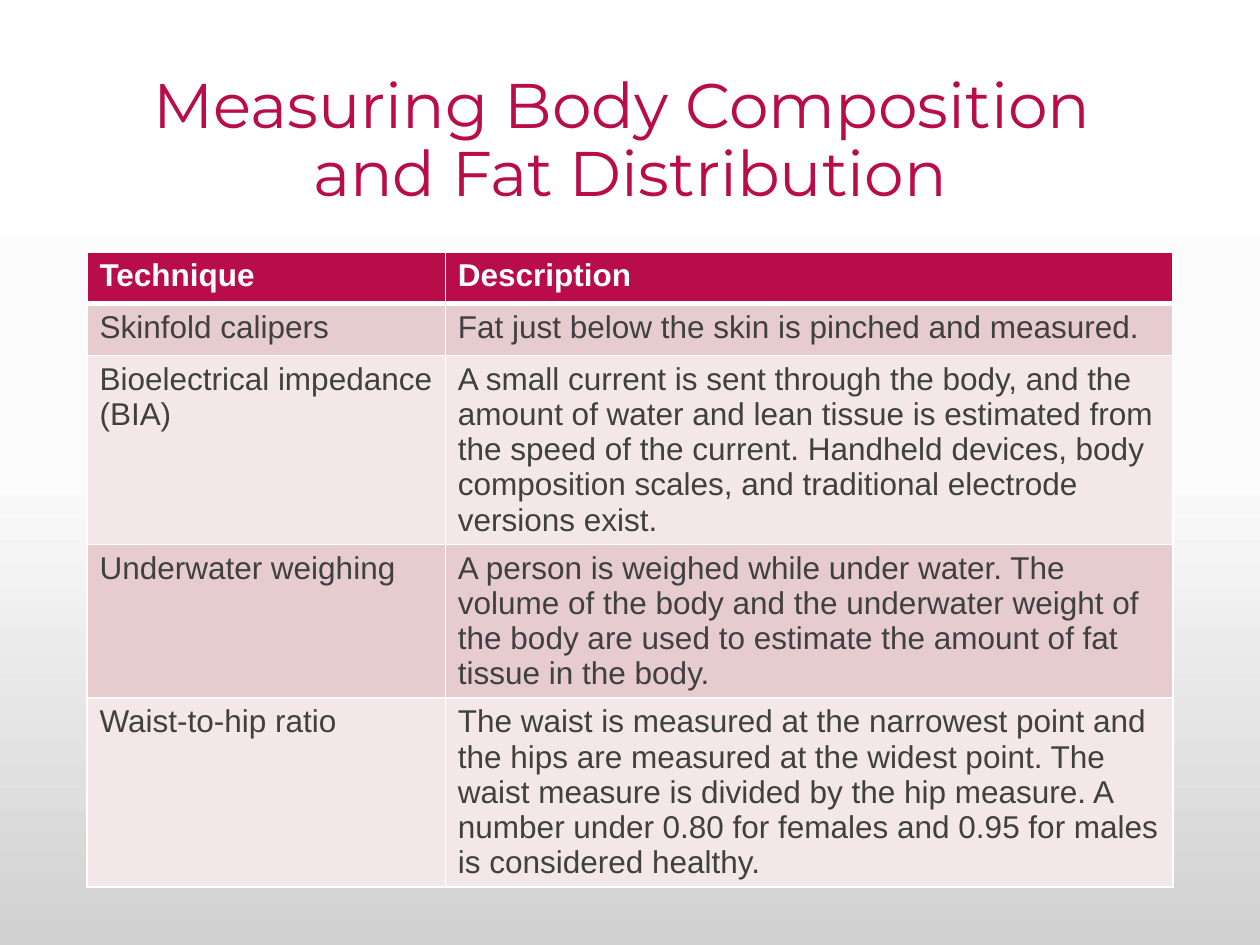
from dataclasses import dataclass

import pptx
import pptx.dml.color
import pptx.enum.text
import pptx.oxml.ns
import pptx.util
from lxml import etree

COLORS = {
    "accent": "B80D48",
    "text": "3F403F",
    "white": "FFFFFF",
    "band_dark": "E6CCCF",
    "band_light": "F3E7E9",
}
BACKGROUND_STOPS = {0: "FFFFFF", 50: "FBFBFB", 100: "D1D1D1"}
SLIDE_WIDTH, SLIDE_HEIGHT = pptx.util.Inches(10), pptx.util.Inches(7.5)
MARGIN = pptx.util.Inches(0.69)
CONTENT_WIDTH = SLIDE_WIDTH - 2 * MARGIN
TECHNIQUE_SHARE = 0.33
ROW_HEIGHT = pptx.util.Inches(0.41)
TITLE_LINES = ("Measuring Body Composition ", "and Fat Distribution")


@dataclass
class Method:
    technique: str
    description: str


HEADER = Method("Technique", "Description")
METHODS = [
    Method("Skinfold calipers", "Fat just below the skin is pinched and measured."),
    Method(
        "Bioelectrical impedance (BIA)",
        "A small current is sent through the body, and the amount of water and lean "
        "tissue is estimated from the speed of the current. Handheld devices, body "
        "composition scales, and traditional electrode versions exist.",
    ),
    Method(
        "Underwater weighing",
        "A person is weighed while under water. The volume of the body and the "
        "underwater weight of the body are used to estimate the amount of fat tissue "
        "in the body.",
    ),
    Method(
        "Waist-to-hip ratio",
        "The waist is measured at the narrowest point and the hips are measured at the "
        "widest point. The waist measure is divided by the hip measure. A number under "
        "0.80 for females and 0.95 for males is considered healthy.",
    ),
]


def rgb(name: str) -> pptx.dml.color.RGBColor:
    return pptx.dml.color.RGBColor.from_string(COLORS[name])


def add_run(paragraph, text: str, font: str, size: float, color: str, bold: bool = False) -> None:
    run = paragraph.add_run()
    run.text = text
    run.font.name = font
    run.font.size = pptx.util.Pt(size)
    run.font.bold = bold
    run.font.color.rgb = rgb(color)


def add_element(parent, tag: str, **attributes: str):
    return etree.SubElement(parent, pptx.oxml.ns.qn(tag), **attributes)


def fill_background(slide) -> None:
    fill = slide.background.fill
    fill.gradient()
    fill.gradient_angle = 270
    stops = slide.element.find(".//" + pptx.oxml.ns.qn("a:gsLst"))
    for stop in list(stops):
        stops.remove(stop)
    for position, color in BACKGROUND_STOPS.items():
        stop = add_element(stops, "a:gs", pos=str(position * 1000))
        add_element(stop, "a:srgbClr", val=color)


def add_title(slide) -> None:
    title = slide.shapes.title
    title.left, title.top = MARGIN, pptx.util.Inches(0.4)
    title.width, title.height = CONTENT_WIDTH, pptx.util.Inches(1.45)
    frame = title.text_frame
    frame.word_wrap = True
    frame.auto_size = pptx.enum.text.MSO_AUTO_SIZE.NONE
    frame.vertical_anchor = pptx.enum.text.MSO_ANCHOR.MIDDLE
    paragraph = frame.paragraphs[0]
    paragraph.alignment = pptx.enum.text.PP_ALIGN.CENTER
    paragraph.line_spacing = 0.9
    for index, line in enumerate(TITLE_LINES):
        if index:
            paragraph.add_line_break()
        add_run(paragraph, line, "Montserrat", 36, "accent")


def set_borders(cell, widths: dict[str, float]) -> None:
    properties = cell._tc.get_or_add_tcPr()
    # Border lines must come before the cell fill
    for index, (side, width) in enumerate(widths.items()):
        line = etree.Element(pptx.oxml.ns.qn(f"a:ln{side}"), w=str(pptx.util.Pt(width)))
        fill = add_element(line, "a:solidFill")
        add_element(fill, "a:srgbClr", val=COLORS["white"])
        properties.insert(index, line)


def add_methods_table(slide) -> None:
    rows = [HEADER, *METHODS]
    frame = slide.shapes.add_table(
        len(rows), 2, MARGIN, pptx.util.Inches(2), CONTENT_WIDTH, ROW_HEIGHT * len(rows)
    )
    table = frame.table
    table.columns[0].width = int(CONTENT_WIDTH * TECHNIQUE_SHARE)
    table.columns[1].width = CONTENT_WIDTH - table.columns[0].width
    for row_index, method in enumerate(rows):
        table.rows[row_index].height = ROW_HEIGHT
        is_header = row_index == 0
        band = "band_dark" if row_index % 2 else "band_light"
        borders = {
            "L": 1,
            "R": 1,
            "T": 3 if row_index == 1 else 1,
            "B": 3 if is_header else 1,
        }
        for column, text in enumerate((method.technique, method.description)):
            cell = table.cell(row_index, column)
            cell.fill.solid()
            cell.fill.fore_color.rgb = rgb("accent" if is_header else band)
            set_borders(cell, borders)
            add_run(
                cell.text_frame.paragraphs[0], text, "Arial", 18,
                "white" if is_header else "text", is_header,
            )
    # Rows grow with their text inside this frame
    frame.height = pptx.util.Inches(5.31)


def main() -> None:
    presentation = pptx.Presentation()
    presentation.slide_width, presentation.slide_height = SLIDE_WIDTH, SLIDE_HEIGHT
    slide = presentation.slides.add_slide(presentation.slide_layouts.get_by_name("Title Only"))
    fill_background(slide)
    add_title(slide)
    add_methods_table(slide)
    presentation.save("out.pptx")


if __name__ == "__main__":
    main()
